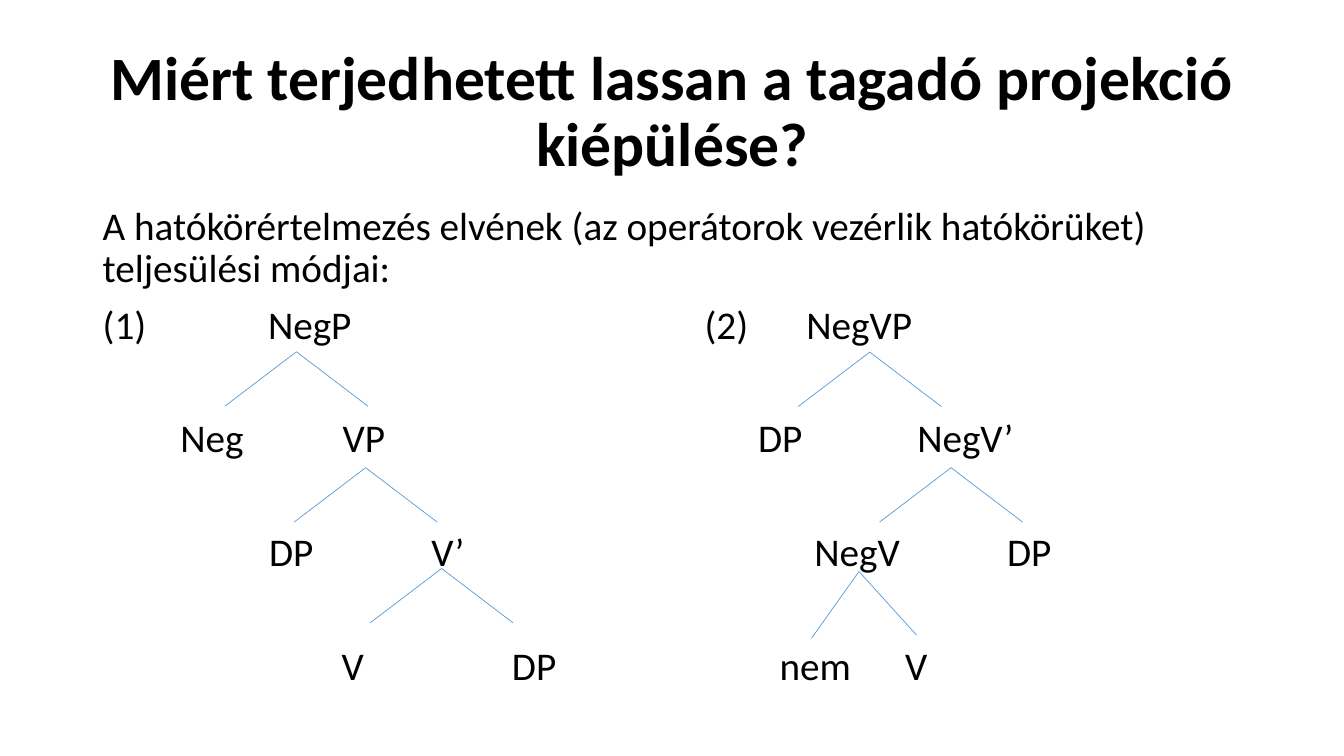
from dataclasses import dataclass

import lxml.etree
import pptx
import pptx.dml.color
import pptx.enum.shapes
import pptx.enum.text
import pptx.oxml.ns
import pptx.util

BLACK = pptx.dml.color.RGBColor(0x00, 0x00, 0x00)
BRANCH_BLUE = pptx.dml.color.RGBColor(0x5B, 0x9B, 0xD5)
FONT = "Calibri"

# Grid of 40 columns by 22.5 rows, with square cells
SLIDE_WIDTH = pptx.util.Inches(13.33)
SLIDE_HEIGHT = pptx.util.Inches(7.5)
CELL = SLIDE_HEIGHT / 22.5
MARGIN = 2.76
TEXT_WIDTH = 34.5
TEXT_INSET = 0.3
ROW_SPACE = 10
LEVEL_SPACE = 51  # one empty text line between tree levels


@dataclass
class Node:
    label: str
    column: float


@dataclass
class Level:
    start: str
    nodes: list[Node]
    space_before: float = LEVEL_SPACE


@dataclass
class Fork:
    column: float
    row: float
    left: float = 2.13
    right: float = 2.13
    left_drop: float = 1.62
    right_drop: float = 1.62


TITLE = "Miért terjedhetett lassan a tagadó projekció kiépülése?"
INTRODUCTION = ("A hatókörértelmezés elvének (az operátorok vezérlik hatókörüket) "
                "teljesülési módjai:")

LEVELS = [
    Level("(1)", [Node("NegP", 7.98), Node("(2)", 20.97), Node("NegVP", 24)], ROW_SPACE),
    Level("", [Node("Neg", 5.37), Node("VP", 10.2), Node("DP", 22.56), Node("NegV’", 27.3)]),
    Level("", [Node("DP", 8.01), Node("V’", 12.84), Node("NegV", 24.24), Node("DP", 29.97)]),
    Level("", [Node("V", 10.17), Node("DP", 15.24), Node("nem", 23.2), Node("V", 26.94)]),
]

FORKS = [
    Fork(8.82, 10.47), Fork(10.88, 13.92), Fork(13.14, 16.92),
    Fork(25.88, 10.48), Fork(28.3, 13.92),
    Fork(25.56, 17.01, left=1.41, right=1.71, left_drop=1.98, right_drop=1.89),
]


def cells(count: float) -> pptx.util.Emu:
    return pptx.util.Emu(round(count * CELL))


def add_text_frame(slide, row: float, height: float):
    box = slide.shapes.add_textbox(cells(MARGIN), cells(row), cells(TEXT_WIDTH), cells(height))
    box.text_frame.word_wrap = True
    return box.text_frame


def write_paragraph(paragraph, text: str, size: float, space_before: float = 0,
                    bold: bool = False) -> None:
    paragraph.text = text
    paragraph.line_spacing = 0.9
    paragraph.space_before = pptx.util.Pt(space_before)
    paragraph.font.name = FONT
    paragraph.font.size = pptx.util.Pt(size)
    paragraph.font.bold = bold
    paragraph.font.color.rgb = BLACK


def set_tab_stops(paragraph, nodes: list[Node]) -> None:
    tab_list = lxml.etree.Element(pptx.oxml.ns.qn("a:tabLst"))
    for node in nodes:
        position = cells(node.column - MARGIN - TEXT_INSET)
        lxml.etree.SubElement(tab_list, pptx.oxml.ns.qn("a:tab"), pos=str(position), algn="l")
    # Tab stops come before the default run properties
    properties = paragraph._p.get_or_add_pPr()
    properties.find(pptx.oxml.ns.qn("a:defRPr")).addprevious(tab_list)


def add_level(text_frame, level: Level) -> None:
    paragraph = text_frame.add_paragraph()
    text = "\t".join([level.start] + [node.label for node in level.nodes])
    write_paragraph(paragraph, text, 28, level.space_before)
    set_tab_stops(paragraph, level.nodes)


def add_fork(slide, fork: Fork) -> None:
    for shift, drop in ((-fork.left, fork.left_drop), (fork.right, fork.right_drop)):
        branch = slide.shapes.add_connector(
            pptx.enum.shapes.MSO_CONNECTOR.STRAIGHT,
            cells(fork.column), cells(fork.row),
            cells(fork.column + shift), cells(fork.row + drop))
        branch.line.color.rgb = BRANCH_BLUE
        branch.line.width = pptx.util.Pt(0.5)
        lxml.etree.SubElement(branch._element.spPr, pptx.oxml.ns.qn("a:effectLst"))


def main() -> None:
    presentation = pptx.Presentation()
    presentation.slide_width = SLIDE_WIDTH
    presentation.slide_height = SLIDE_HEIGHT
    slide = presentation.slides.add_slide(presentation.slide_layouts[6])

    # Title
    title = add_text_frame(slide, row=1.2, height=4.35)
    title.vertical_anchor = pptx.enum.text.MSO_ANCHOR.MIDDLE
    write_paragraph(title.paragraphs[0], TITLE, 44, bold=True)
    title.paragraphs[0].alignment = pptx.enum.text.PP_ALIGN.CENTER

    # Introduction and tree labels
    body = add_text_frame(slide, row=6, height=16.1)
    write_paragraph(body.paragraphs[0], INTRODUCTION, 28, ROW_SPACE)
    for level in LEVELS:
        add_level(body, level)

    # Tree branches
    for fork in FORKS:
        add_fork(slide, fork)

    presentation.save("out.pptx")


if __name__ == "__main__":
    main()
